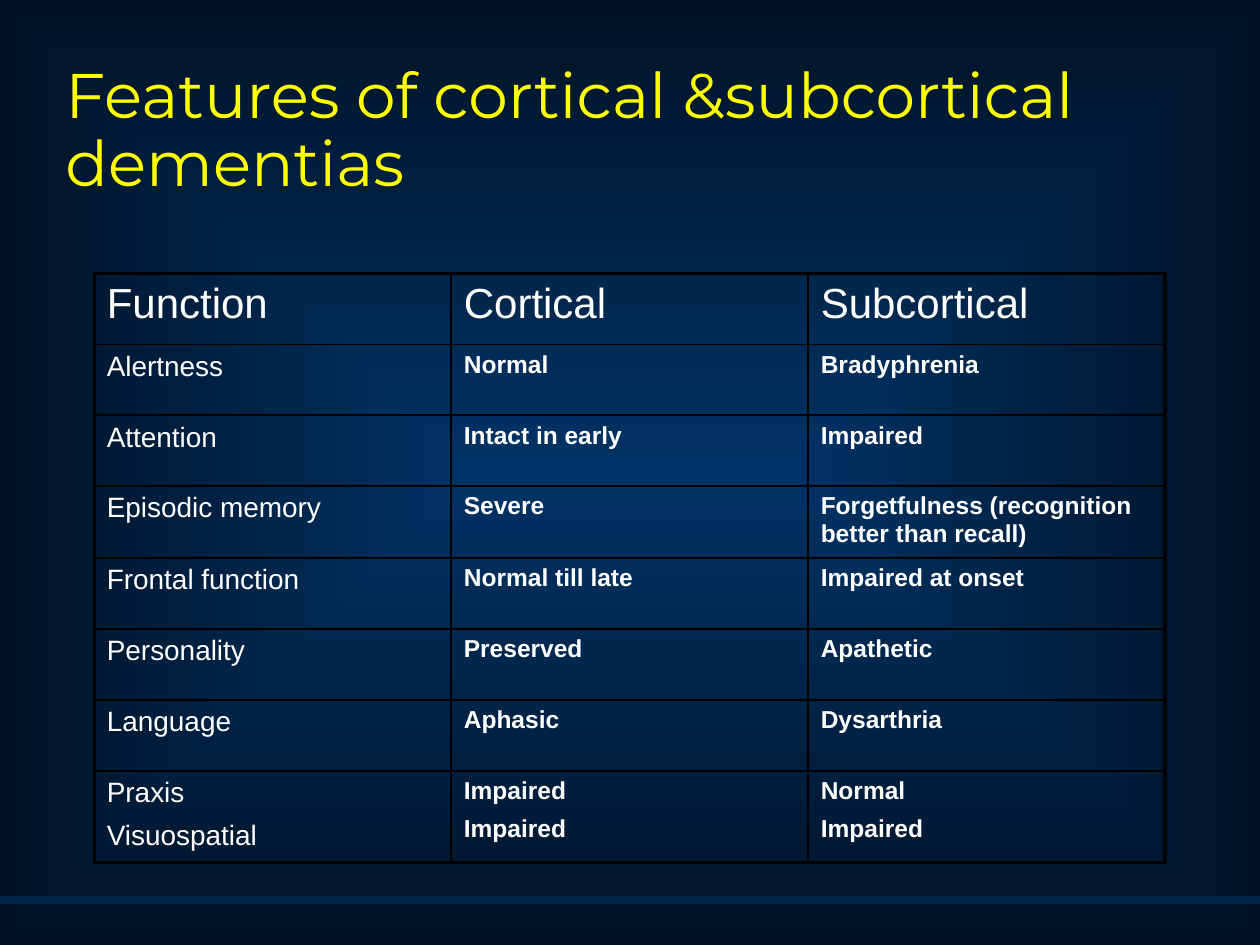
from lxml import etree
from pptx import Presentation
from pptx import util as u
from pptx.dml.color import RGBColor
from pptx.enum import shapes, text
from pptx.oxml import parse_xml
from pptx.oxml.ns import nsdecls, qn

GLOW = RGBColor(0x00, 0x33, 0x66)
NIGHT = RGBColor(0x00, 0x13, 0x26)
RULE = RGBColor(0x00, 0x26, 0x4C)
YELLOW = RGBColor(0xFF, 0xFF, 0x00)
WHITE = RGBColor(0xFF, 0xFF, 0xFF)
BLACK = RGBColor(0x00, 0x00, 0x00)

OUTER_BORDER = u.Pt(2.25)
INNER_BORDER = u.Pt(1)
ROW_HEIGHT = u.Cm(1.43)
LAST_ROW_HEIGHT = u.Cm(1.74)

FEATURES = [
    ("Function", "Cortical", "Subcortical"),
    ("Alertness", "Normal", "Bradyphrenia"),
    ("Attention", "Intact in early", "Impaired"),
    ("Episodic memory", "Severe", "Forgetfulness (recognition better than recall)"),
    ("Frontal function", "Normal till late", "Impaired at onset"),
    ("Personality", "Preserved", "Apathetic"),
    ("Language", "Aphasic", "Dysarthria"),
    ("Praxis\nVisuospatial", "Impaired\nImpaired", "Normal\nImpaired"),
]


def style_paragraph(paragraph, font_name, size, color, bold=False):
    for run in paragraph.runs:
        run.font.name = font_name
        run.font.size = u.Pt(size)
        run.font.color.rgb = color
        run.font.bold = bold


def paint_background(slide):
    background = parse_xml(
        f'<p:bg {nsdecls("p", "a")}><p:bgPr><a:gradFill rotWithShape="0"><a:gsLst>'
        f'<a:gs pos="0"><a:srgbClr val="{GLOW}"/></a:gs>'
        f'<a:gs pos="100000"><a:srgbClr val="{NIGHT}"/></a:gs></a:gsLst>'
        '<a:path path="shape"><a:fillToRect l="50000" t="50000" r="50000" b="50000"/></a:path>'
        "</a:gradFill><a:effectLst/></p:bgPr></p:bg>"
    )
    slide.element.cSld.insert(0, background)


def add_footer_rule(slide, left, top, width):
    rule = slide.shapes.add_connector(
        shapes.MSO_CONNECTOR.STRAIGHT, left, top, left + width, top
    )
    rule.line.color.rgb = RULE
    rule.line.width = u.Pt(4.5)
    etree.SubElement(rule.element.spPr, qn("a:effectLst"))


def add_title(slide, left, top, width, height):
    text_frame = slide.shapes.add_textbox(left, top, width, height).text_frame
    text_frame.word_wrap = True
    text_frame.vertical_anchor = text.MSO_ANCHOR.TOP
    text_frame.text = "Features of cortical &subcortical dementias"
    paragraph = text_frame.paragraphs[0]
    paragraph.line_spacing = 0.9
    style_paragraph(paragraph, "Montserrat", 36, YELLOW)


def set_borders(cell, edges):
    properties = cell._tc.get_or_add_tcPr()
    for side, is_outer in edges.items():
        width = OUTER_BORDER if is_outer else INNER_BORDER
        properties.append(parse_xml(
            f'<a:ln{side} {nsdecls("a")} w="{width}"><a:solidFill>'
            f'<a:srgbClr val="{BLACK}"/></a:solidFill></a:ln{side}>'
        ))


def fill_cell(cell, content, size, bold):
    cell.fill.background()
    cell.text_frame.text = content
    for index, paragraph in enumerate(cell.text_frame.paragraphs):
        paragraph.line_spacing = 1.01
        if index:
            paragraph.space_before = u.Pt(0.4 * size)
        style_paragraph(paragraph, "Arial", size, WHITE, bold)


def add_feature_table(slide, left, top, width):
    last_row = len(FEATURES) - 1
    last_column = len(FEATURES[0]) - 1
    height = ROW_HEIGHT * last_row + LAST_ROW_HEIGHT
    table = slide.shapes.add_table(
        last_row + 1, last_column + 1, left, top, width, height
    ).table
    table.first_row = False
    table.horz_banding = False
    for row_index, features in enumerate(FEATURES):
        is_last = row_index == last_row
        table.rows[row_index].height = LAST_ROW_HEIGHT if is_last else ROW_HEIGHT
        for column_index, content in enumerate(features):
            cell = table.cell(row_index, column_index)
            set_borders(cell, {
                "L": column_index == 0,
                "R": column_index == last_column,
                "T": row_index == 0,
                "B": is_last,
            })
            if row_index == 0:
                size, bold = 24, False
            elif column_index == 0:
                size, bold = 16, False
            else:
                size, bold = 14, True
            fill_cell(cell, content, size, bold)


def main():
    presentation = Presentation()
    presentation.slide_width = u.Cm(25.4)
    presentation.slide_height = u.Cm(19.05)
    slide = presentation.slides.add_slide(presentation.slide_layouts[6])
    paint_background(slide)
    add_footer_rule(slide, 0, u.Cm(18.14), presentation.slide_width)
    add_title(slide, u.Cm(1.07), u.Cm(1.17), u.Cm(23.29), u.Cm(2.11))
    add_feature_table(slide, u.Cm(1.9), u.Cm(5.51), u.Cm(21.59))
    presentation.save("out.pptx")


if __name__ == "__main__":
    main()
